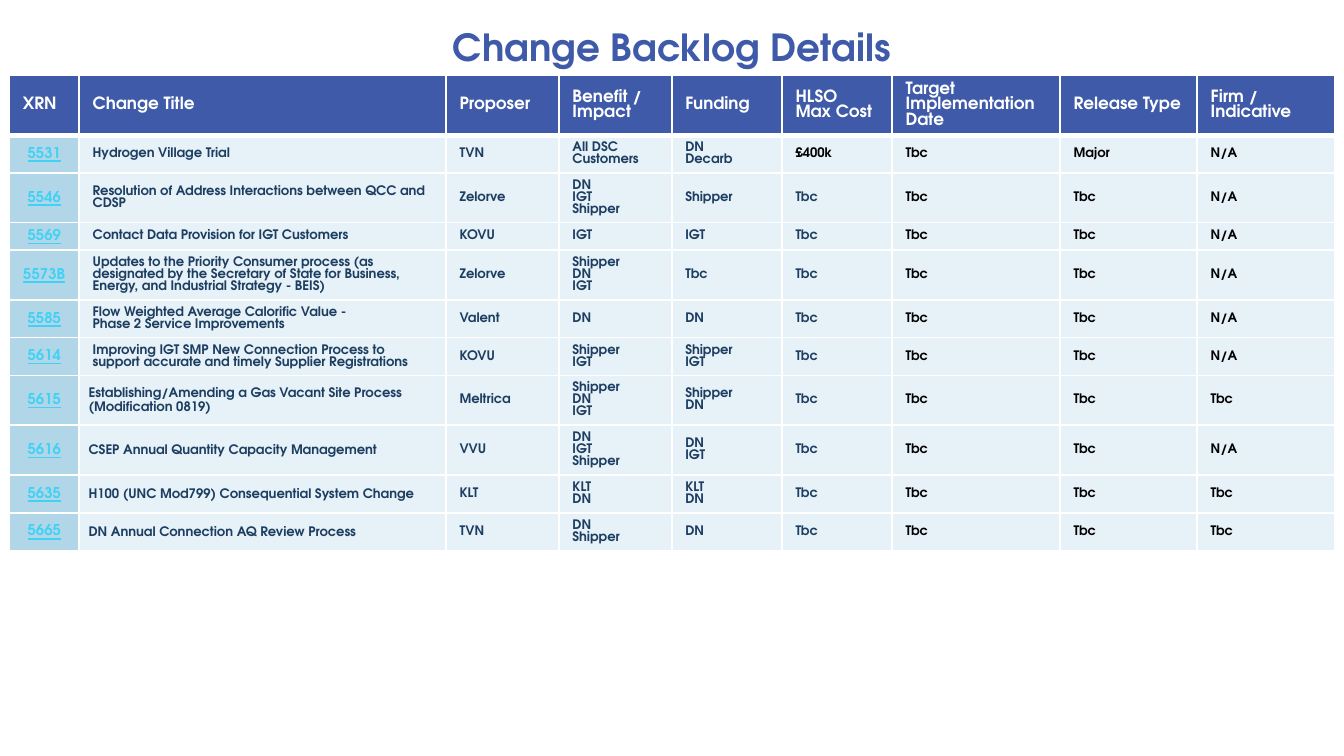
from dataclasses import dataclass

from lxml import etree
from pptx import Presentation
from pptx import util as u
from pptx.dml.color import RGBColor
from pptx.enum import text
from pptx.oxml.ns import qn


@dataclass(frozen=True)
class Theme:
    font: str = "TeX Gyre Adventor"
    blue: str = "3E5AA8"
    navy: str = "1D3E61"
    cyan: str = "40D1F5"
    black: str = "000000"
    white: str = "FFFFFF"
    key_fill: str = "B1D6E8"
    row_fill: str = "E6F1F8"
    title_size: int = 20
    header_size: int = 9
    key_size: int = 8
    body_size: int = 7
    thin: int = 1
    thick: int = 3


# Column headings and widths
COLUMNS = [
    ("XRN", 0.52), ("Change Title", 2.73), ("Proposer", 0.84),
    ("Benefit / Impact", 0.84), ("Funding", 0.82), ("HLSO\nMax Cost", 0.82),
    ("Target Implementation Date", 1.25), ("Release Type", 1.02),
    ("Firm / Indicative", 1.02),
]

# Lines of text in the row, then XRN, title, proposer, benefit, funding,
# cost, release type, firm or indicative
CHANGES = [
    (2, "5531", "Hydrogen Village Trial", "TVN", "All DSC Customers", "DN\nDecarb",
     "£400k", "Major", "N/A"),
    (3, "5546", "Resolution of Address Interactions between QCC and CDSP", "Zelorve",
     "DN\nIGT\nShipper", "Shipper", "Tbc", "Tbc", "N/A"),
    (1, "5569", "Contact Data Provision for IGT Customers", "KOVU", "IGT", "IGT",
     "Tbc", "Tbc", "N/A"),
    (3, "5573B", "Updates to the Priority Consumer process (as designated by the "
     "Secretary of State for Business, Energy, and Industrial Strategy - BEIS)",
     "Zelorve", "Shipper\nDN\nIGT", "Tbc", "Tbc", "Tbc", "N/A"),
    (2, "5585", "Flow Weighted Average Calorific Value -\nPhase 2 Service Improvements",
     "Valent", "DN", "DN", "Tbc", "Tbc", "N/A"),
    (2, "5614", "Improving IGT SMP New Connection Process to support accurate and "
     "timely Supplier Registrations", "KOVU", "Shipper\nIGT", "Shipper\nIGT",
     "Tbc", "Tbc", "N/A"),
    (3, "5615", "Establishing/Amending a Gas Vacant Site Process (Modification 0819)",
     "Meltrica", "Shipper\nDN\nIGT", "Shipper\nDN", "Tbc", "Tbc", "Tbc"),
    (3, "5616", "CSEP Annual Quantity Capacity Management", "VVU",
     "DN\nIGT\nShipper", "DN\nIGT", "Tbc", "Tbc", "N/A"),
    (2, "5635", "H100 (UNC Mod799) Consequential System Change", "KLT",
     "KLT\nDN", "KLT\nDN", "Tbc", "Tbc", "Tbc"),
    (2, "5665", "DN Annual Connection AQ Review Process", "TVN", "DN\nShipper", "DN",
     "Tbc", "Tbc", "Tbc"),
]
TARGET_DATE = "Tbc"
LOOSE_TITLES = {"5615", "5616", "5635", "5665"}
HEADER_HEIGHT = 0.44
ROW_HEIGHTS = {1: 0.2, 2: 0.28, 3: 0.37}


class BacklogSlide:
    def __init__(self, deck, theme):
        self.theme = theme
        self.slide = deck.slides.add_slide(deck.slide_layouts[6])

    def style(self, frame, size, color, align=text.PP_ALIGN.LEFT, underline=False):
        for paragraph in frame.paragraphs:
            paragraph.alignment = align
            for run in paragraph.runs:
                font = run.font
                font.name, font.size, font.bold = self.theme.font, u.Pt(size), True
                font.color.rgb = RGBColor.from_string(color)
                if underline:
                    font.underline = True

    def title(self, wording, left, top, width, height):
        box = self.slide.shapes.add_textbox(*map(u.Inches, (left, top, width, height)))
        frame = box.text_frame
        frame.word_wrap = True
        frame.vertical_anchor = text.MSO_ANCHOR.MIDDLE
        frame.text = wording
        self.style(frame, self.theme.title_size, self.theme.blue, text.PP_ALIGN.CENTER)

    def borders(self, cell, top, bottom):
        properties = cell._tc.get_or_add_tcPr()
        thin = self.theme.thin
        for side, points in zip("LRTB", (thin, thin, top, bottom)):
            line = etree.SubElement(properties, qn(f"a:ln{side}"), w=str(u.Pt(points)))
            fill = etree.SubElement(line, qn("a:solidFill"))
            etree.SubElement(fill, qn("a:srgbClr"), val=self.theme.white)

    def cell(self, cell, wording, fill, top, bottom, **style):
        self.borders(cell, top, bottom)
        cell.fill.solid()
        cell.fill.fore_color.rgb = RGBColor.from_string(fill)
        cell.vertical_anchor = text.MSO_ANCHOR.MIDDLE
        cell.text_frame.text = wording
        self.style(cell.text_frame, **style)

    def loosen(self, cell):
        cell.margin_left = cell.margin_right = u.Inches(0.07)
        cell.margin_top = cell.margin_bottom = 0
        for paragraph in cell.text_frame.paragraphs:
            paragraph.line_spacing = 1.15
            paragraph.space_after = u.Pt(10)

    def backlog(self, left, top):
        theme = self.theme
        widths = [width for _, width in COLUMNS]
        heights = [HEADER_HEIGHT] + [ROW_HEIGHTS[change[0]] for change in CHANGES]
        table = self.slide.shapes.add_table(
            len(heights), len(widths), u.Inches(left), u.Inches(top),
            u.Inches(sum(widths)), u.Inches(sum(heights))).table
        table.first_row = table.horz_banding = False
        for column, width in zip(table.columns, widths):
            column.width = u.Inches(width)
        for row, height in zip(table.rows, heights):
            row.height = u.Inches(height)

        # Header row
        for index, (heading, _) in enumerate(COLUMNS):
            self.cell(table.cell(0, index), heading, theme.blue, theme.thin, theme.thick,
                      size=theme.header_size, color=theme.white)

        # One row per change
        for number, (_, *values) in enumerate(CHANGES, start=1):
            values.insert(6, TARGET_DATE)
            upper = theme.thick if number == 1 else theme.thin
            for index, value in enumerate(values):
                cell = table.cell(number, index)
                if index == 0:
                    self.cell(cell, value, theme.key_fill, upper, theme.thin,
                              size=theme.key_size, color=theme.cyan,
                              align=text.PP_ALIGN.CENTER, underline=True)
                    continue
                dark = index > 5 or value.startswith("£")
                self.cell(cell, value, theme.row_fill, upper, theme.thin,
                          size=theme.body_size,
                          color=theme.black if dark else theme.navy)
            if values[0] in LOOSE_TITLES:
                self.loosen(table.cell(number, 1))


def main():
    deck = Presentation()
    # Widescreen, 16:9
    deck.slide_width = u.Inches(10)
    deck.slide_height = deck.slide_width * 9 // 16
    page = BacklogSlide(deck, Theme())
    page.backlog(0.07, 0.56)
    page.title("Change Backlog Details", 0.5, 0.14, 9, 0.41)
    deck.save("out.pptx")


if __name__ == "__main__":
    main()
